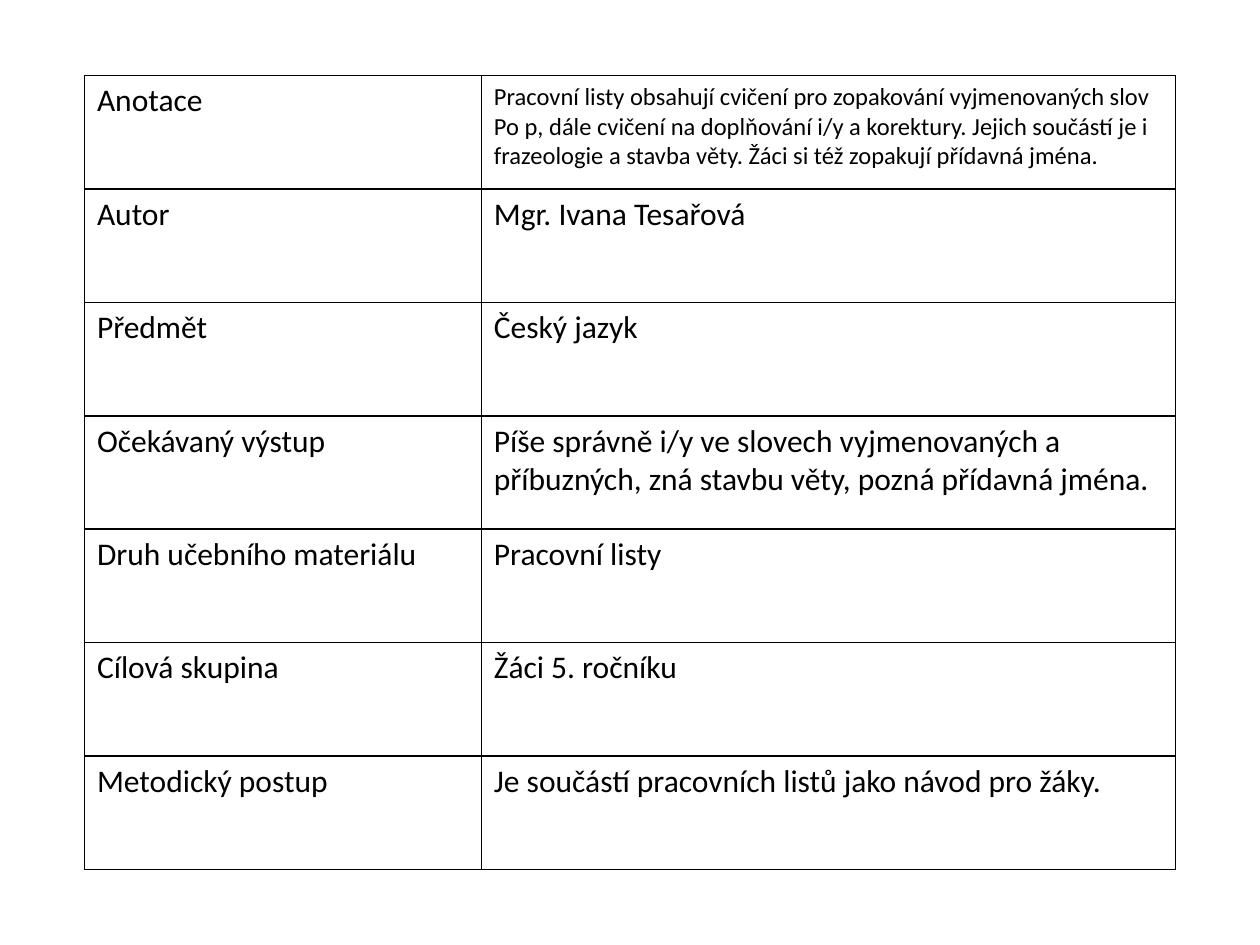
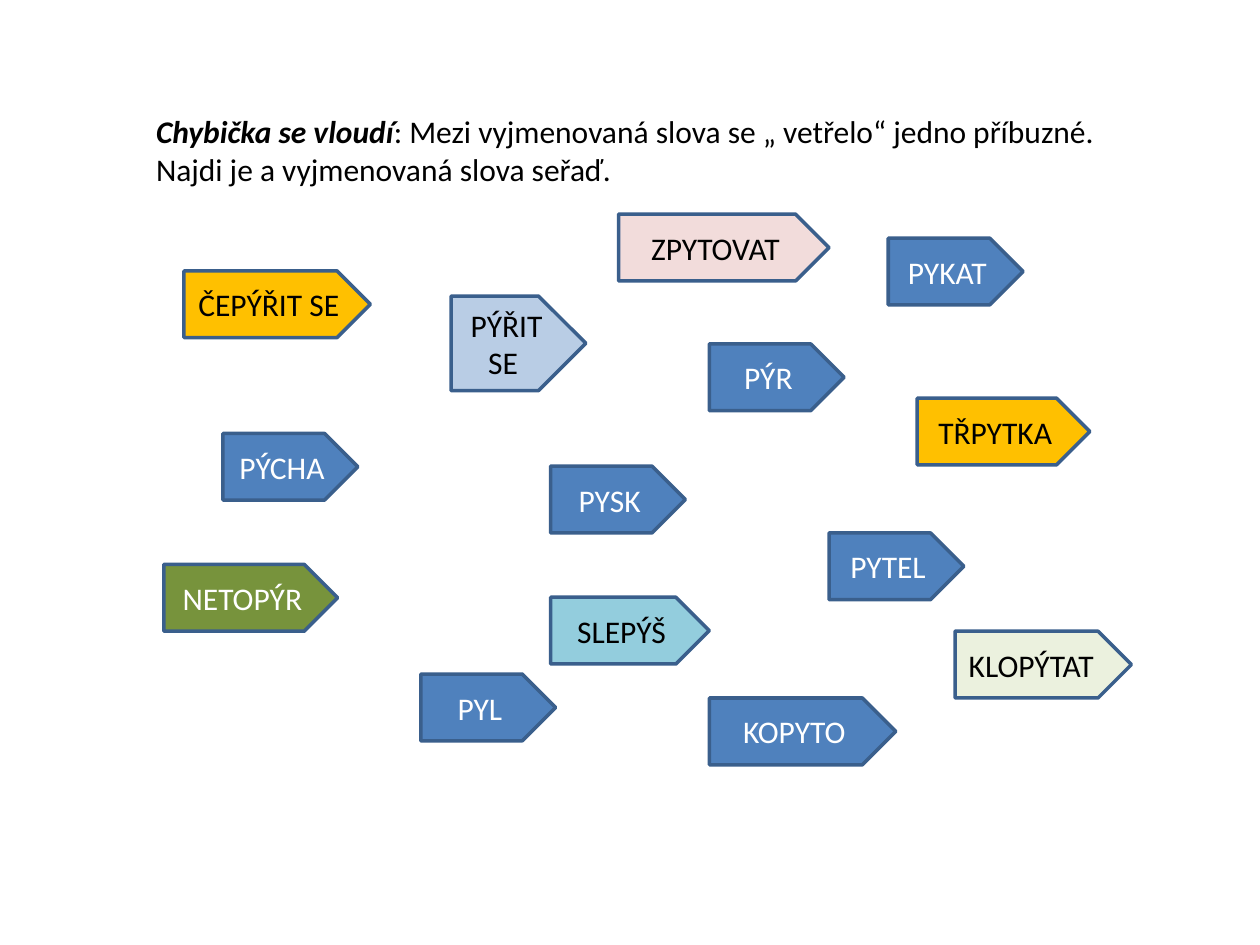
from lxml import etree
from pptx import Presentation
from pptx.dml.color import RGBColor
from pptx.enum.shapes import MSO_SHAPE
from pptx.enum.text import MSO_ANCHOR, PP_ALIGN
from pptx.oxml import parse_xml
from pptx.oxml.ns import nsdecls
from pptx.util import Inches, Pt

FONT = "Calibri"
BLACK, WHITE, OUTLINE = "000000", "FFFFFF", "3A5F8C"
BLUE, ORANGE = "4F81BD", "FFC000"


def rgb(value):
    return RGBColor.from_string(value)


def style(tf, size, color=BLACK, align=PP_ALIGN.LEFT):
    for p in tf.paragraphs:
        p.alignment = align
        p.font.name = FONT
        p.font.size = Pt(size)
        p.font.color.rgb = rgb(color)


prs = Presentation()
prs.slide_width, prs.slide_height = Inches(10), Inches(7.5)
blank = prs.slide_layouts[6]

s = prs.slides.add_slide(blank)
rows = [
    ("Anotace", "Pracovní listy obsahují cvičení pro zopakování vyjmenovaných slov\n"
     "Po p, dále cvičení na doplňování i/y a korektury. Jejich součástí je i "
     "frazeologie a stavba věty. Žáci si též zopakují přídavná jména."),
    ("Autor", "Mgr. Ivana Tesařová"),
    ("Předmět", "Český jazyk"),
    ("Očekávaný výstup", "Píše správně i/y ve slovech vyjmenovaných a příbuzných, "
     "zná stavbu věty, pozná přídavná jména."),
    ("Druh učebního materiálu", "Pracovní listy"),
    ("Cílová skupina", "Žáci 5. ročníku"),
    ("Metodický postup", "Je součástí pracovních listů jako návod pro žáky."),
]
table = s.shapes.add_table(len(rows), 2, Inches(0.67), Inches(0.6),
                           Inches(8.66), Inches(6.3)).table
table.first_row = table.horz_banding = False
table.columns[0].width, table.columns[1].width = Inches(3.15), Inches(5.51)
for i, row in enumerate(rows):
    table.rows[i].height = Inches(0.9)
    for j, text in enumerate(row):
        cell = table.cell(i, j)
        cell.text = text
        style(cell.text_frame, 14 if (i, j) == (0, 1) else 18)
        tc_pr = cell._tc.get_or_add_tcPr()
        for side in ("lnL", "lnR", "lnT", "lnB"):
            tc_pr.append(parse_xml(
                f'<a:{side} {nsdecls("a")} w="{Pt(1)}"><a:solidFill>'
                f'<a:srgbClr val="{BLACK}"/></a:solidFill></a:{side}>'))
        etree.SubElement(tc_pr, "{http://schemas.openxmlformats.org/drawingml/2006/main}noFill")

s = prs.slides.add_slide(blank)
words = [
    ("ČEPÝŘIT SE ", 1.46, 2.15, 1.48, 0.53, ORANGE, BLACK),
    ("PÝŘIT SE ", 3.58, 2.35, 1.07, 0.75, "B9CDE5", BLACK),
    ("PYKAT", 7.05, 1.89, 1.07, 0.53, BLUE, WHITE),
    ("PÝCHA", 1.77, 3.44, 1.07, 0.53, BLUE, WHITE),
    ("PYSK", 4.37, 3.7, 1.07, 0.53, BLUE, WHITE),
    ("TŘPYTKA", 7.28, 3.16, 1.37, 0.53, ORANGE, BLACK),
    ("ZPYTOVAT", 4.91, 1.7, 1.67, 0.53, "F2DCDB", BLACK),
    ("NETOPÝR", 1.3, 4.48, 1.38, 0.53, "77933C", WHITE),
    ("SLEPÝŠ", 4.37, 4.74, 1.26, 0.53, "93CDDD", BLACK),
    ("PYTEL", 6.58, 4.23, 1.07, 0.53, BLUE, WHITE),
    ("PÝR", 5.63, 2.73, 1.07, 0.53, BLUE, WHITE),
    ("KOPYTO", 5.63, 5.54, 1.48, 0.53, BLUE, WHITE),
    ("PYL", 3.34, 5.35, 1.07, 0.53, BLUE, WHITE),
    ("KLOPÝTAT ", 7.58, 5.01, 1.4, 0.53, "EBF1DE", BLACK),
]
for word, x, y, w, h, fill, color in words:
    sp = s.shapes.add_shape(MSO_SHAPE.PENTAGON, Inches(x), Inches(y), Inches(w), Inches(h))
    sp.shadow.inherit = False
    sp.fill.solid()
    sp.fill.fore_color.rgb = rgb(fill)
    sp.line.color.rgb = rgb(OUTLINE)
    sp.line.width = Pt(2)
    tf = sp.text_frame
    tf.text = word
    tf.word_wrap = True
    tf.vertical_anchor = MSO_ANCHOR.MIDDLE
    style(tf, 18, color, PP_ALIGN.CENTER)

tf = s.shapes.add_textbox(Inches(1.14), Inches(0.84), Inches(7.7), Inches(1.01)).text_frame
tf.word_wrap = False
p = tf.paragraphs[0]
r = p.add_run()
r.text = "Chybička se vloudí"
r.font.bold = r.font.italic = True
p.add_run().text = ": Mezi vyjmenovaná slova se „ vetřelo“ jedno příbuzné."
tf.add_paragraph().text = "Najdi je a vyjmenovaná slova seřaď."
style(tf, 18)

prs.save("out.pptx")
